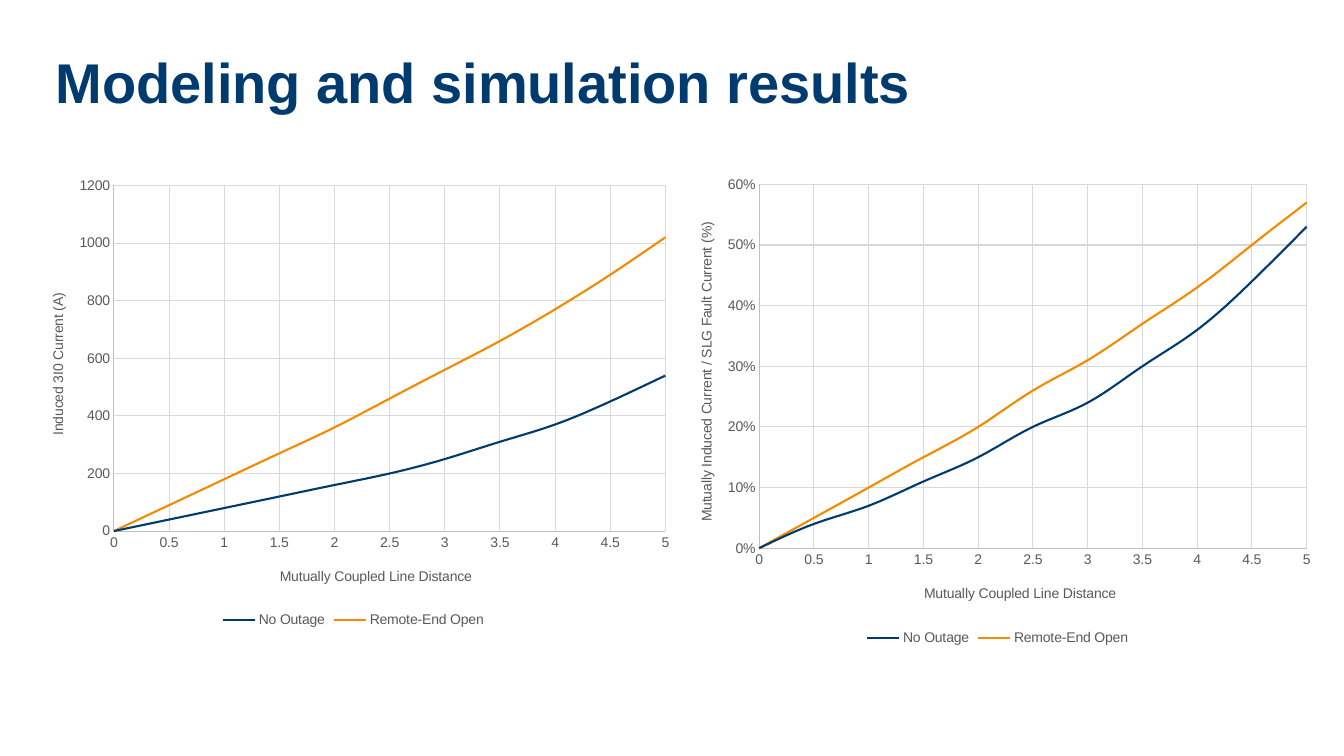
from lxml import etree
from pptx import Presentation
from pptx import util as u
from pptx.chart.data import XyChartData
from pptx.dml.color import RGBColor
from pptx.enum import chart as ch
from pptx.enum import text
from pptx.oxml.ns import qn

COLORS = {"navy": "003B70", "orange": "F38A00", "gray": "595959",
          "axis": "BFBFBF", "grid": "D9D9D9"}
MILES = [i / 2 for i in range(11)]


class Deck:
    face = "Arial"

    def __init__(self, deck):
        self.slide = deck.slides.add_slide(deck.slide_layouts[6])

    def color(self, name):
        return RGBColor.from_string(COLORS[name])

    def font(self, font, size, color, bold=False):
        font.name, font.size, font.bold = self.face, u.Pt(size), bold
        font.color.rgb = self.color(color)

    def line(self, line, color, width):
        line.color.rgb = self.color(color)
        line.width = u.Pt(width)

    def title(self, words, box):
        frame = self.slide.shapes.add_textbox(*map(u.Inches, box)).text_frame
        frame.word_wrap = True
        frame.vertical_anchor = text.MSO_ANCHOR.TOP
        frame.margin_left = frame.margin_right = u.Inches(0.05)
        frame.margin_top = frame.margin_bottom = u.Inches(0.05)
        para = frame.paragraphs[0]
        para.text = words
        para.line_spacing = 0.9
        self.font(para.runs[0].font, 40, "navy", True)

    def place(self, node, index, box, spot):
        for old in node.findall(qn("c:layout")):
            node.remove(old)
        layout = etree.Element(qn("c:layout"))
        manual = etree.SubElement(layout, qn("c:manualLayout"))
        left, top, width, height = box
        parts = {"xMode": "edge", "yMode": "edge",
                 "x": (spot[0] - left) / width, "y": (spot[1] - top) / height}
        if len(spot) == 4:
            parts = {"layoutTarget": "inner", **parts,
                     "w": spot[2] / width, "h": spot[3] / height}
        for tag, value in parts.items():
            etree.SubElement(manual, qn("c:" + tag)).set("val", str(value))
        node.insert(index, layout)

    def axis(self, axis, words, top, step, form):
        axis.minimum_scale, axis.maximum_scale, axis.major_unit = 0, top, step
        axis.major_tick_mark = axis.minor_tick_mark = ch.XL_TICK_MARK.NONE
        axis.has_major_gridlines = True
        self.line(axis.major_gridlines.format.line, "grid", 0.75)
        self.line(axis.format.line, "axis", 0.75)
        self.font(axis.tick_labels.font, 10, "gray")
        axis.tick_labels.number_format = form
        axis.tick_labels.number_format_is_linked = False
        frame = axis.axis_title.text_frame
        frame.text = words
        self.font(frame.paragraphs[0].runs[0].font, 10, "gray")

    def chart(self, box, plot, spots, label, top, step, form, series):
        data = XyChartData()
        for name, values in series.items():
            row = data.add_series(name)
            for mile, value in zip(MILES, values):
                row.add_data_point(mile, value)
        kind = ch.XL_CHART_TYPE.XY_SCATTER_SMOOTH_NO_MARKERS
        chart = self.slide.shapes.add_chart(
            kind, *map(u.Inches, box), data).chart
        chart.has_title = False
        chart.font.name, chart.font.size = self.face, u.Pt(10)
        self.axis(chart.category_axis, "Mutually Coupled Line Distance",
                  5, 0.5, "General")
        self.axis(chart.value_axis, label, top, step, form)
        chart.has_legend = True
        chart.legend.position = ch.XL_LEGEND_POSITION.BOTTOM
        chart.legend.include_in_layout = False
        self.font(chart.legend.font, 10, "gray")
        chart.plots[0].vary_by_categories = False
        for row, color in zip(chart.plots[0].series, ("navy", "orange")):
            self.line(row.format.line, color, 1.5)
            row.marker.style = ch.XL_MARKER_STYLE.NONE
        root = chart._chartSpace
        for smooth in root.xpath(".//c:smooth"):
            smooth.set("val", "1")
        self.place(root.xpath(".//c:plotArea")[0], 0, box, plot)
        for node, spot in zip(root.xpath(".//c:title"), spots):
            self.place(node, 1, box, spot)


def main():
    deck = Presentation()
    deck.slide_width, deck.slide_height = u.Inches(13.33), u.Inches(7.5)
    page = Deck(deck)
    page.title("Modeling and simulation results", (0.5, 0.5, 12.33, 1.25))
    page.chart(
        (0.24, 1.67, 6.53, 4.6), (1.13, 1.84, 5.47, 3.43),
        [(2.75, 5.6), (0.46, 2.88)],
        "Induced 3I0 Current (A)", 1200, 200, "General",
        {"No Outage": [0, 40, 80, 120, 160, 200, 250, 310, 370, 450, 540],
         "Remote-End Open": [0, 90, 180, 270, 360, 460, 560, 660, 770, 890,
                             1020]})
    page.chart(
        (6.67, 1.66, 6.45, 4.79), (7.53, 1.83, 5.43, 3.61),
        [(9.14, 5.77), (6.89, 2.18)],
        "Mutually Induced Current / SLG Fault Current (%)", 0.6, 0.1, "0%",
        {"No Outage": [0, 0.04, 0.07, 0.11, 0.15, 0.2, 0.24, 0.3, 0.36, 0.44,
                       0.53],
         "Remote-End Open": [0, 0.05, 0.1, 0.15, 0.2, 0.26, 0.31, 0.37, 0.43,
                             0.5, 0.57]})
    deck.save("out.pptx")


if __name__ == "__main__":
    main()
